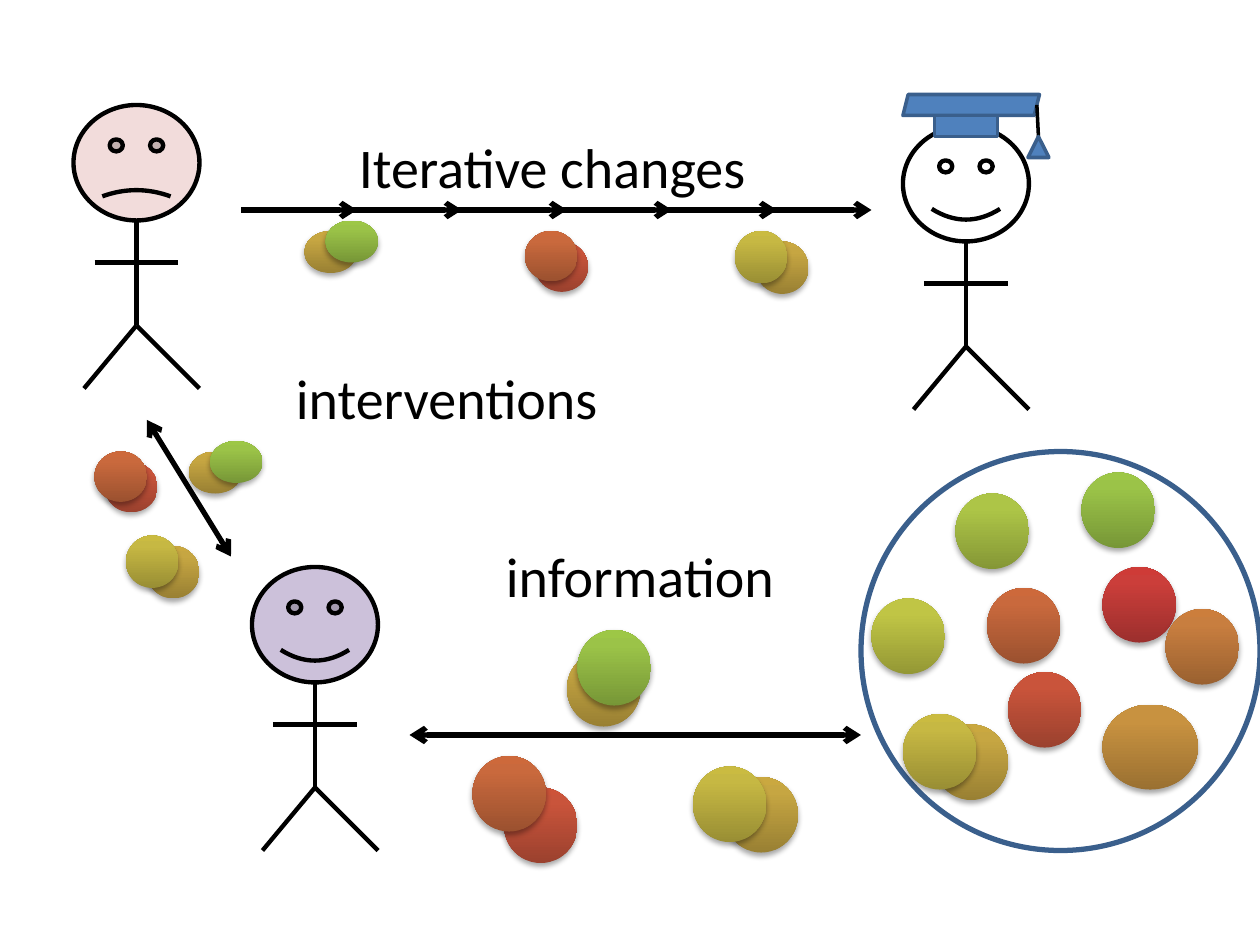
import copy

import pptx
import pptx.util
import pptx.dml.color
import pptx.enum.shapes
import pptx.enum.text
import pptx.oxml
import pptx.oxml.ns

SHAPE = pptx.enum.shapes.MSO_SHAPE
COLORS = {"ink": "000000", "blue": "4F81BD", "navy": "3A5F8C",
          "sad": "F2DCDB", "helper": "CCC1DA"}
# Ball shading from bottom to top, at 0, 80 and 100 percent
BALLS = {
    "red": ("9C2F2D", "CB3E3A", "CE3B37"),
    "vermilion": ("9B412E", "C9543B", "CD5339"),
    "rust": ("9B512F", "C9693D", "CD693B"),
    "orange": ("9A6130", "C87E3F", "CC7E3C"),
    "amber": ("9A7031", "C89240", "CB933D"),
    "gold": ("998033", "C6A642", "CAA840"),
    "mustard": ("998E34", "C6B843", "CABB41"),
    "olive": ("949835", "C0C545", "C3C842"),
    "lime": ("859736", "ADC547", "AFC845"),
    "green": ("779737", "9BC348", "9DC746"),
}
STOPS = (0, 0.8, 1)
SHADOW = ('<a:outerShdw %s blurRad="40000" dist="23000" dir="5400000" rotWithShape="0">'
          '<a:srgbClr val="000000"><a:alpha val="35000"/></a:srgbClr></a:outerShdw>'
          % pptx.oxml.ns.nsdecls("a"))
LARGE, MEDIUM, ROUND, FLAT = (7, 7.2), (5, 4.8), (5, 5), (5, 4)


def cells(*values):
    """Turn grid units, twelve to the inch, into lengths."""
    return [pptx.util.Inches(value / 12) for value in values]


def rgb(name):
    return pptx.dml.color.RGBColor.from_string(COLORS.get(name, name))


class Sketch:
    """Holds the style and the current slide."""
    text_format = {"name": "Calibri", "size": pptx.util.Pt(32), "bold": False}

    def __init__(self, page):
        self.page = page

    def shape(self, kind, col, row, width, height, fill=None, line=None, weight=2):
        item = self.page.shapes.add_shape(kind, *cells(col, row, width, height))
        item.shadow.inherit = False
        if fill:
            item.fill.solid()
            item.fill.fore_color.rgb = rgb(fill)
        else:
            item.fill.background()
        if line:
            item.line.color.rgb = rgb(line)
            item.line.width = pptx.util.Pt(weight)
        else:
            item.line.fill.background()
        return item

    def line(self, start, end, weight=2.5, heads=()):
        item = self.page.shapes.add_connector(
            pptx.enum.shapes.MSO_CONNECTOR.STRAIGHT, *cells(*start, *end))
        item.line.color.rgb = rgb("ink")
        item.line.width = pptx.util.Pt(weight)
        outline = item.line._get_or_add_ln()
        for head in heads:
            pptx.oxml.ns.qn("a:" + head)
            outline.append(pptx.oxml.parse_xml(
                '<a:%s %s type="arrow"/>' % (head, pptx.oxml.ns.nsdecls("a"))))
        item._element.spPr.append(pptx.oxml.parse_xml(
            "<a:effectLst %s/>" % pptx.oxml.ns.nsdecls("a")))

    def ball(self, color, col, row, size=LARGE):
        item = self.shape(SHAPE.OVAL, col, row, *size)
        item.fill.gradient()
        item.fill.gradient_angle = 90
        first = item._element.spPr.find(".//" + pptx.oxml.ns.qn("a:gs"))
        first.addnext(copy.deepcopy(first))
        for stop, place, shade in zip(item.fill.gradient_stops, STOPS, BALLS[color]):
            stop.position = place
            stop.color.rgb = rgb(shade)
        effects = item._element.spPr.find(pptx.oxml.ns.qn("a:effectLst"))
        effects.append(pptx.oxml.parse_xml(SHADOW))

    def pair(self, back, front, col, row, shift, size=LARGE):
        self.ball(back, col, row, size)
        self.ball(front, col + shift[0], row + shift[1], size)

    def person(self, col, row, smile, fill=None):
        limbs = [((6, 11), (6, 21)), ((2, 15), (10, 15)),
                 ((6, 21), (1, 27)), ((6, 21), (12, 27))]
        for start, end in limbs:
            self.line((col + start[0], row + start[1]), (col + end[0], row + end[1]))
        face = self.shape(SHAPE.SMILEY_FACE, col, row, 12, 11, fill, "ink", 2.5)
        face.adjustments[0] = smile

    def label(self, text, col, row, width):
        box = self.page.shapes.add_textbox(*cells(col, row, width, 7.7))
        box.text_frame.word_wrap = True
        box.text_frame.auto_size = pptx.enum.text.MSO_AUTO_SIZE.SHAPE_TO_FIT_TEXT
        span = box.text_frame.paragraphs[0].add_run()
        span.text = text
        for key, value in self.text_format.items():
            setattr(span.font, key, value)
        span.font.color.rgb = rgb("ink")


def main():
    deck = pptx.Presentation()
    deck.slide_width, deck.slide_height = cells(120, 90)
    sketch = Sketch(deck.slides.add_slide(deck.slide_layouts[6]))

    # Pool of information
    sketch.shape(SHAPE.OVAL, 82, 43, 38, 38, line="navy", weight=3)
    for color, col, row in [("red", 105, 54), ("vermilion", 96, 64), ("rust", 94, 56),
                            ("orange", 111, 58), ("olive", 83, 57),
                            ("lime", 91, 47), ("green", 103, 45)]:
        sketch.ball(color, col, row)
    sketch.ball("amber", 105, 67.1, (9.1, 8.1))
    sketch.pair("gold", "mustard", 89, 69, (-3, -1))

    # Learner before, helper, learner after
    sketch.person(7, 10, -0.027, "sad")
    sketch.person(24, 54, 0.047, "helper")
    sketch.person(86, 12, 0.047)

    # Graduation cap
    sketch.shape(SHAPE.PARALLELOGRAM, 86, 9, 13, 2, "blue", "navy")
    sketch.shape(SHAPE.RECTANGLE, 89, 11, 6, 2, "blue", "navy")
    sketch.line((98.75, 10), (99, 15), 2)
    sketch.shape(SHAPE.ISOSCELES_TRIANGLE, 97.9, 13, 2, 2, "blue", "navy")

    # Information exchange
    both = ("headEnd", "tailEnd")
    sketch.pair("gold", "green", 54, 62, (1, -2))
    sketch.line((39, 70), (82, 70), 3, both)
    sketch.pair("vermilion", "rust", 48, 75, (-3, -3))
    sketch.pair("gold", "mustard", 69, 74, (-3, -1))
    sketch.label("information", 47, 51, 30)

    # Interventions, and the changes they bring
    sketch.line((14, 40), (22, 53), 3, both)
    for col in (23, 33, 43, 53, 63, 72):
        sketch.line((col, 20), (col + 11, 20), 3, ("tailEnd",))
    for col, row in [(10, 44), (51, 23)]:
        sketch.pair("vermilion", "rust", col, row, (-1, -1), MEDIUM)
    for col, row in [(18, 43), (29, 22)]:
        sketch.pair("gold", "green", col, row, (2, -1), FLAT)
    for col, row in [(14, 52), (72, 23)]:
        sketch.pair("gold", "mustard", col, row, (-2, -1), ROUND)
    sketch.label("interventions", 27, 34, 38)
    sketch.label("Iterative changes", 33, 12, 45)

    deck.save("out.pptx")


if __name__ == "__main__":
    main()
